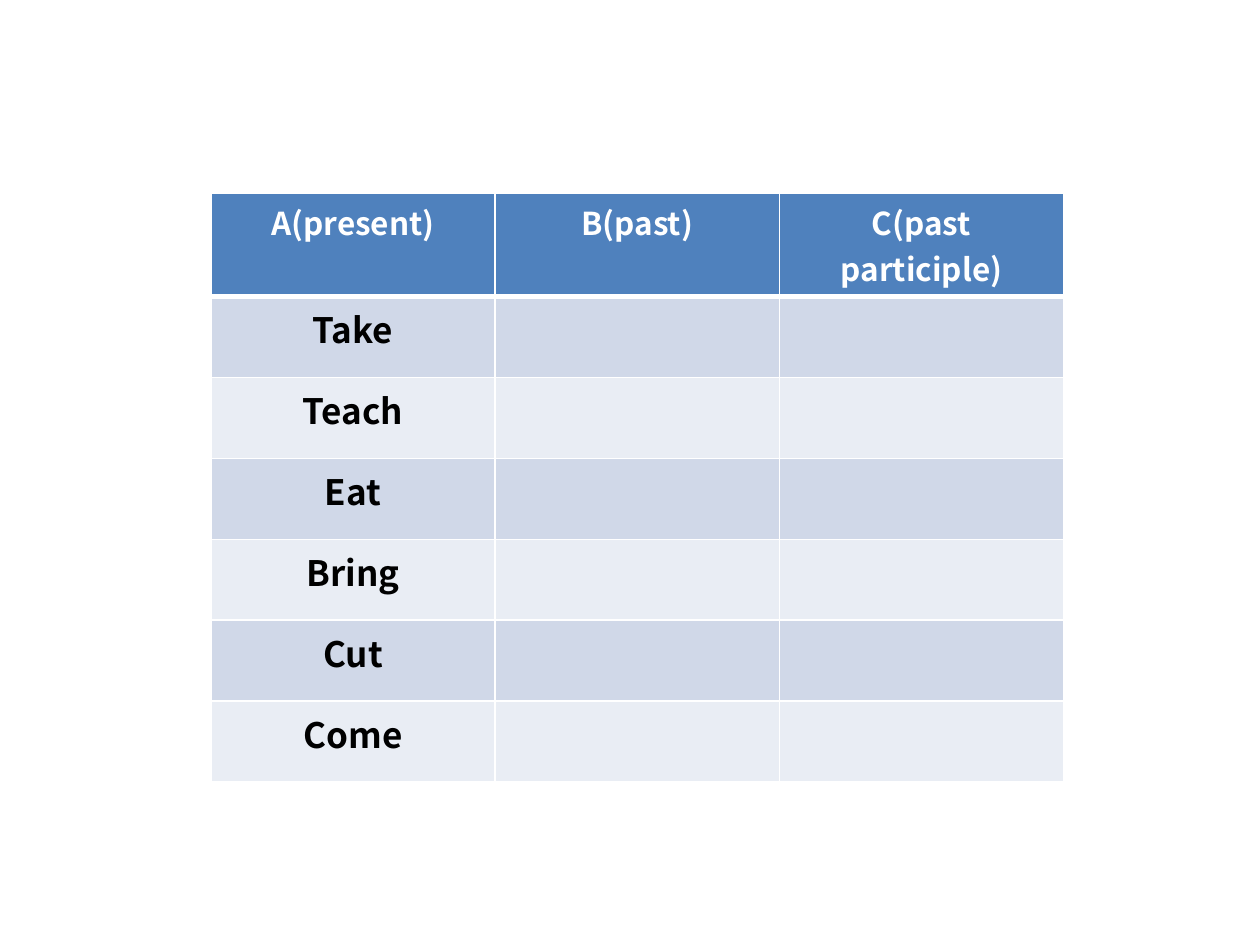
from dataclasses import dataclass

from lxml.etree import SubElement
from pptx import Presentation
from pptx.dml.color import RGBColor
from pptx.enum.text import PP_ALIGN as Align
from pptx.oxml.ns import qn
from pptx.table import _Cell as Cell
from pptx.util import Cm, Pt

FONT = "Noto Sans CJK KR"
COLORS = {
    "header": "4F81BD",
    "odd": "D0D8E8",
    "even": "E9EDF4",
    "white": "FFFFFF",
    "black": "000000",
}
HEADINGS = ["A(present)", "B(past)", "C(past participle)"]
VERBS = ["Take", "Teach", "Eat", "Bring", "Cut", "Come"]
COLUMN_WIDTH = Cm(5.73)
ROW_HEIGHT = Cm(1.63)


@dataclass(frozen=True)
class RowStyle:
    fill: str
    text: str
    size: int
    bottom: int = 1
    top: int = 1


HEADER = RowStyle("header", "white", 18, bottom=3)
FIRST = RowStyle("odd", "black", 20, top=3)
ODD = RowStyle("odd", "black", 20)
EVEN = RowStyle("even", "black", 20)


def add_border(cell: Cell, side: str, width: int) -> None:
    properties = cell._tc.get_or_add_tcPr()
    line = SubElement(properties, qn(f"a:ln{side}"), w=str(Pt(width)))
    fill = SubElement(line, qn("a:solidFill"))
    SubElement(fill, qn("a:srgbClr"), val=COLORS["white"])


def draw_cell(cell: Cell, text: str, style: RowStyle) -> None:
    widths = {"L": 1, "R": 1, "T": style.top, "B": style.bottom}
    for side, width in widths.items():
        add_border(cell, side, width)
    cell.fill.solid()
    cell.fill.fore_color.rgb = RGBColor.from_string(COLORS[style.fill])
    para = cell.text_frame.paragraphs[0]
    para.alignment = Align.CENTER
    if text:
        span = para.add_run()
        span.text = text
        span.font.name = FONT
        span.font.size = Pt(style.size)
        span.font.bold = True
        span.font.color.rgb = RGBColor.from_string(COLORS[style.text])
        SubElement(span.font._element, qn("a:ea"), typeface=FONT)


def main() -> None:
    deck = Presentation()
    deck.slide_width, deck.slide_height = Cm(25.4), Cm(19.05)
    page = deck.slides.add_slide(deck.slide_layouts[6])

    rows = [HEADINGS] + [[verb, "", ""] for verb in VERBS]
    styles = [HEADER, FIRST, EVEN] + [ODD, EVEN] * 2
    table = page.shapes.add_table(
        len(rows), len(HEADINGS), Cm(4.25), Cm(3.89),
        COLUMN_WIDTH * len(HEADINGS), ROW_HEIGHT * len(rows),
    ).table
    for column in table.columns:
        column.width = COLUMN_WIDTH
    for row, texts, style in zip(table.rows, rows, styles):
        row.height = ROW_HEIGHT
        for cell, text in zip(row.cells, texts):
            draw_cell(cell, text, style)

    deck.save("out.pptx")


if __name__ == "__main__":
    main()
